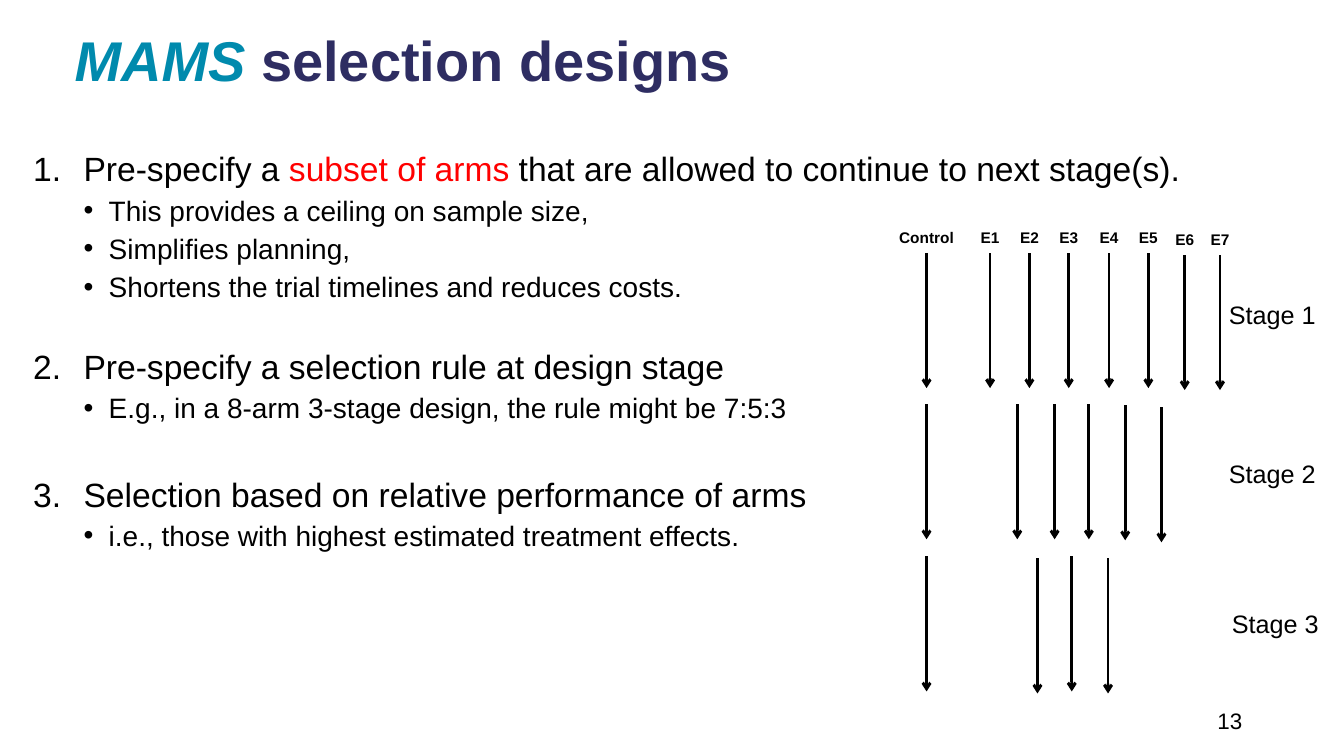
import dataclasses

import pptx
import pptx.dml.color
import pptx.enum.shapes
import pptx.enum.text
import pptx.oxml
import pptx.oxml.ns
import pptx.util

Inches = pptx.util.Inches
Pt = pptx.util.Pt
RGB = pptx.dml.color.RGBColor.from_string
ALIGN = pptx.enum.text.PP_ALIGN
ANCHOR = pptx.enum.text.MSO_ANCHOR
SHAPE = pptx.enum.shapes.MSO_SHAPE
STRAIGHT = pptx.enum.shapes.MSO_CONNECTOR.STRAIGHT


@dataclasses.dataclass(frozen=True)
class Theme:
    """Colours, typeface and type sizes of the slide."""
    font: str = "Arial"
    ink: str = "000000"
    paper: str = "FFFFFF"
    teal: str = "008AAD"
    navy: str = "2E2D62"
    red: str = "FF0000"
    title: int = 40
    point: int = 24
    detail: int = 20
    stage: int = 18
    number: int = 16
    arm: int = 11


THEME = Theme()

POINTS = [
    (0, 0, [("Pre-specify a ", THEME.ink), ("subset of arms ", THEME.red),
            ("that are allowed to continue to next stage(s).", THEME.ink)]),
    (1, 1, [("This provides a ceiling on sample size,", THEME.ink)]),
    (1, 1, [("Simplifies planning,", THEME.ink)]),
    (1, 1, [("Shortens the trial timelines and reduces costs.", THEME.ink)]),
    (0, 27.3, [("Pre-specify a selection rule at design stage", THEME.ink)]),
    (1, 1, [("E.g., in a 8-arm 3-stage design, the rule might be 7:5:3", THEME.ink)]),
    (0, 32.3, [("Selection based on relative performance of arms", THEME.ink)]),
    (1, 1, [("i.e., those with highest estimated treatment effects.", THEME.ink)]),
]

LEVELS = [
    {"size": THEME.point, "margin": 0.5, "hang": 0.5,
     "marker": ("a:buAutoNum", "type", "arabicPeriod")},
    {"size": THEME.detail, "margin": 0.75, "hang": 0.25,
     "marker": ("a:buChar", "char", "•")},
]

STAGES = [
    {"name": "Stage 1", "name_at": (3.39, 0.72), "top": 0.31,
     "arms": [(0.49, 0), (1.12, 0), (1.51, 0), (1.9, 0), (2.3, 0),
              (2.69, 0), (3.05, 0.02), (3.4, 0.02)]},
    {"name": "Stage 2", "name_at": (3.39, 2.3), "top": 1.81,
     "arms": [(0.49, 0), (1.39, 0), (1.76, 0), (2.1, 0), (2.46, 0.01), (2.82, 0.03)]},
    {"name": "Stage 3", "name_at": (3.42, 3.79), "top": 3.32,
     "arms": [(0.49, 0), (1.59, 0.02), (1.93, 0), (2.29, 0.02)]},
]


def add_run(paragraph, text, size, color=THEME.ink, **formats):
    """Append a run in the theme font with the given format values."""
    run = paragraph.add_run()
    run.text = text
    values = {"name": THEME.font, "size": Pt(size), **formats}
    for attribute, value in values.items():
        setattr(run.font, attribute, value)
    run.font.color.rgb = RGB(color)


def set_frame(frame, **formats):
    """Make a text frame wrap and apply its format values."""
    for attribute, value in {"word_wrap": True, "vertical_anchor": ANCHOR.TOP, **formats}.items():
        setattr(frame, attribute, value)
    return frame


def add_text(slide, box, text, size, align=ALIGN.LEFT, anchor=ANCHOR.TOP, **formats):
    """Add a one-paragraph text box and return it."""
    label = slide.shapes.add_textbox(*map(Inches, box))
    paragraph = set_frame(label.text_frame, vertical_anchor=anchor).paragraphs[0]
    paragraph.alignment = align
    add_run(paragraph, text, size, **formats)
    return label


def add_title(slide, box):
    """Place the two-coloured heading in the title placeholder."""
    heading = slide.shapes.title
    for attribute, value in zip(("left", "top", "width", "height"), box):
        setattr(heading, attribute, Inches(value))
    frame = set_frame(heading.text_frame, vertical_anchor=ANCHOR.MIDDLE,
                      auto_size=pptx.enum.text.MSO_AUTO_SIZE.NONE)
    paragraph = frame.paragraphs[0]
    paragraph.alignment = ALIGN.LEFT
    paragraph.line_spacing = 0.9
    add_run(paragraph, "MAMS", THEME.title, THEME.teal, bold=True, italic=True)
    add_run(paragraph, " selection designs", THEME.title, THEME.navy, bold=True, italic=False)


def add_points(slide, box):
    """Write the numbered points and their bulleted details."""
    frame = set_frame(slide.shapes.add_textbox(*map(Inches, box)).text_frame)
    for index, (level, gap, runs) in enumerate(POINTS):
        paragraph = frame.paragraphs[0] if index == 0 else frame.add_paragraph()
        style = LEVELS[level]
        for attribute, value in {"level": level, "line_spacing": 1.1,
                                 "space_before": Pt(gap)}.items():
            setattr(paragraph, attribute, value)
        properties = paragraph._p.get_or_add_pPr()
        properties.set("marL", str(Inches(style["margin"])))
        properties.set("indent", str(-Inches(style["hang"])))
        tag, key, value = style["marker"]
        typeface = pptx.oxml.ns.qn("a:buFont")
        properties.makeelement(typeface)
        font = pptx.oxml.parse_xml(
            f'<a:buFont {pptx.oxml.ns.nsdecls("a")} typeface="{THEME.font}"/>')
        marker = pptx.oxml.parse_xml(
            f'<{tag} {pptx.oxml.ns.nsdecls("a")} {key}="{value}"/>')
        properties.extend([font, marker])
        for text, color in runs:
            add_run(paragraph, text, style["size"], color)


def add_arrow(slide, x, top, length):
    """Draw a downward arrow and return it."""
    arrow = slide.shapes.add_connector(
        STRAIGHT, Inches(x), Inches(top), Inches(x), Inches(top + length))
    arrow.line.color.rgb = RGB(THEME.ink)
    arrow.line.width = Pt(2)
    namespace = pptx.oxml.ns.nsdecls("a")
    arrow.line._get_or_add_ln().append(
        pptx.oxml.parse_xml(f'<a:tailEnd {namespace} type="arrow"/>'))
    arrow._element.spPr.append(pptx.oxml.parse_xml(f"<a:effectLst {namespace}/>"))
    return arrow


def add_arm_label(slide, center, bottom, index):
    """Name one arm above its arrow and return the label."""
    height = 0.3
    if index == 0:
        return add_text(slide, (center - 0.47, bottom - height, 0.94, height),
                        "Control", THEME.arm, ALIGN.CENTER, bold=True)
    label = slide.shapes.add_shape(SHAPE.RECTANGLE, *map(
        Inches, (center - 0.24, bottom - height, 0.48, height)))
    label.shadow.inherit = False
    label.fill.solid()
    label.fill.fore_color.rgb = RGB(THEME.paper)
    label.line.fill.background()
    paragraph = set_frame(label.text_frame).paragraphs[0]
    paragraph.alignment = ALIGN.CENTER
    add_run(paragraph, f"E{index}", THEME.arm, bold=True)
    return label


def add_trial_diagram(slide, left, top):
    """Draw the arms that continue through each of the three stages."""
    for stage in STAGES:
        for index, (offset, drop) in enumerate(stage["arms"]):
            x, start = left + offset, top + stage["top"] + drop
            arrow = add_arrow(slide, x, start, 1.34)
            if stage is STAGES[0]:
                arrow.begin_connect(add_arm_label(slide, x, start, index), 2)
        name_x, name_y = stage["name_at"]
        add_text(slide, (left + name_x, top + name_y, 1.2, 0.4), stage["name"], THEME.stage)


def main():
    """Build the slide and save it."""
    deck = pptx.Presentation()
    deck.slide_width, deck.slide_height = Inches(13.33), Inches(7.5)
    slide = deck.slides.add_slide(deck.slide_layouts[5])
    add_title(slide, (0.64, 0, 12.43, 1.25))
    add_points(slide, (0.23, 1.38, 12.88, 4.52))
    add_trial_diagram(slide, 8.7, 2.2)
    add_text(slide, (9.42, 6.95, 3, 0.4), "13", THEME.number, ALIGN.RIGHT, ANCHOR.MIDDLE)
    deck.save("out.pptx")


if __name__ == "__main__":
    main()
